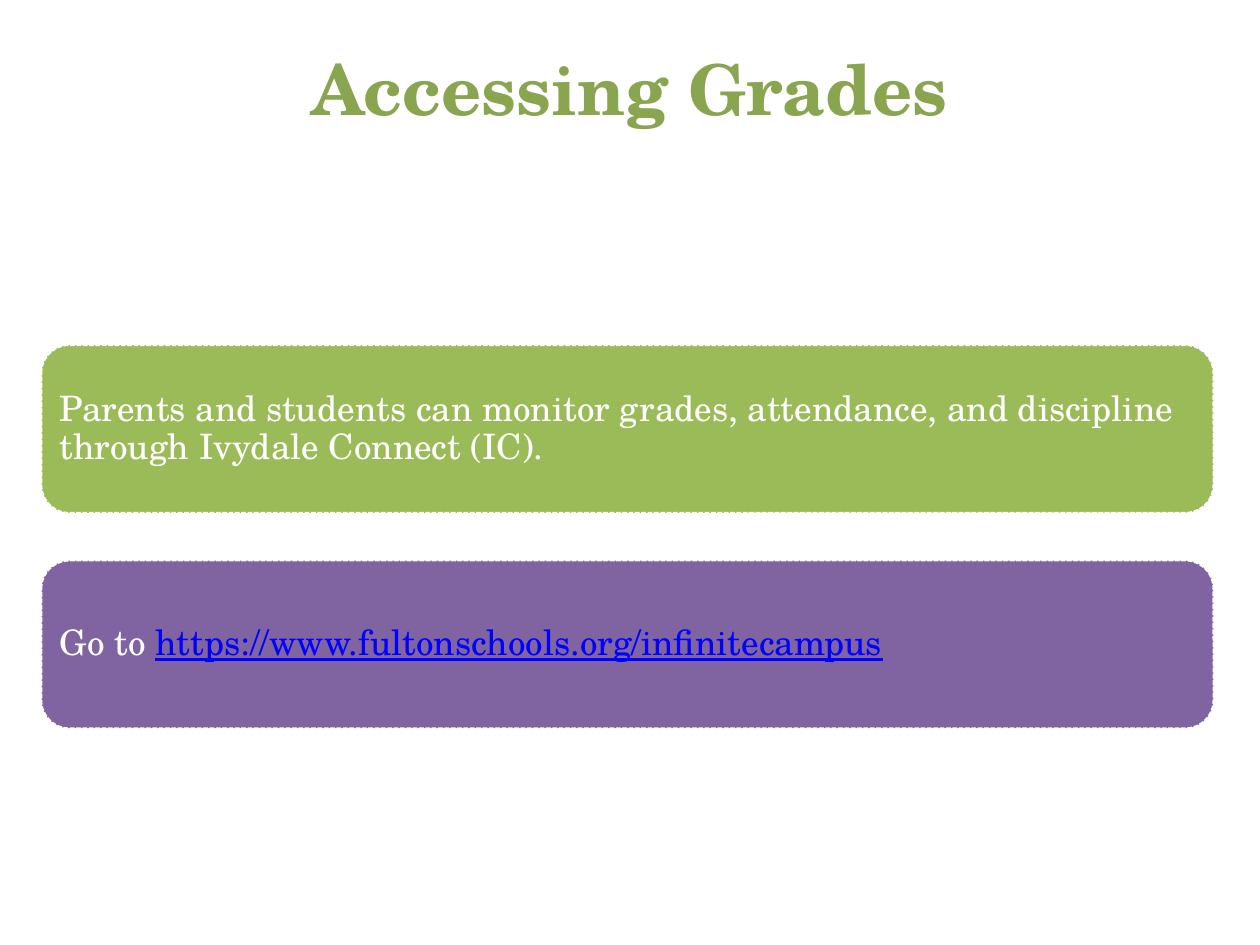
from pptx import Presentation
from pptx import util as u
from pptx.dml.color import RGBColor
from pptx.enum import dml, shapes, text

FONT = "TeX Gyre Schola"
LEFT, WIDE = 0.33, 9.3
TOP, HIGH, STEP = 2.74, 1.33, 1.71
WHITE, BLUE = "FFFFFF", "0000FF"

# Each card: fill, then runs of (words, colour, underline)
CARDS = [
    ("9BBB59", [("Parents and students can monitor grades, attendance, and "
                 "discipline through Ivydale Connect (IC).", WHITE, False)]),
    ("8064A2", [("Go to ", WHITE, False),
                ("https://www.fultonschools.org/infinitecampus", BLUE, True)]),
]


def paint(color, code):
    color.rgb = RGBColor.from_string(code)


def style(run, size, code, bold=False, under=False):
    font = run.font
    font.name, font.size = FONT, u.Pt(size)
    font.bold, font.underline = bold, under
    paint(font.color, code)


def add_title(slide, words):
    box = slide.shapes.add_textbox(*map(u.Inches, (LEFT, 0.25, 9.33, 0.83)))
    frame = box.text_frame
    frame.word_wrap = True
    frame.vertical_anchor = text.MSO_ANCHOR.BOTTOM
    frame.text = words
    para = frame.paragraphs[0]
    para.alignment = text.PP_ALIGN.CENTER
    style(para.runs[0], 40, "89A54F", bold=True)


def add_card(slide, row, fill, parts):
    card = slide.shapes.add_shape(
        shapes.MSO_SHAPE.ROUNDED_RECTANGLE,
        *map(u.Inches, (LEFT, TOP + row * STEP, WIDE, HIGH)))
    card.shadow.inherit = False
    card.fill.solid()
    paint(card.fill.fore_color, fill)
    paint(card.line.color, WHITE)
    card.line.width = u.Pt(0.9)
    card.line.dash_style = dml.MSO_LINE.SQUARE_DOT

    # Card wording
    frame = card.text_frame
    frame.word_wrap = True
    frame.vertical_anchor = text.MSO_ANCHOR.MIDDLE
    for side in ("left", "top", "right", "bottom"):
        setattr(frame, f"margin_{side}", u.Inches(0.08))
    para = frame.paragraphs[0]
    para.alignment = text.PP_ALIGN.LEFT
    para.line_spacing = 0.9
    for words, code, under in parts:
        run = para.add_run()
        run.text = words
        style(run, 20, code, under=under)


def main():
    deck = Presentation()
    deck.slide_width, deck.slide_height = u.Inches(10), u.Inches(7.5)
    slide = deck.slides.add_slide(deck.slide_layouts[6])
    for row, (fill, parts) in enumerate(CARDS):
        add_card(slide, row, fill, parts)
    add_title(slide, "Accessing Grades")
    deck.save("out.pptx")


if __name__ == "__main__":
    main()
